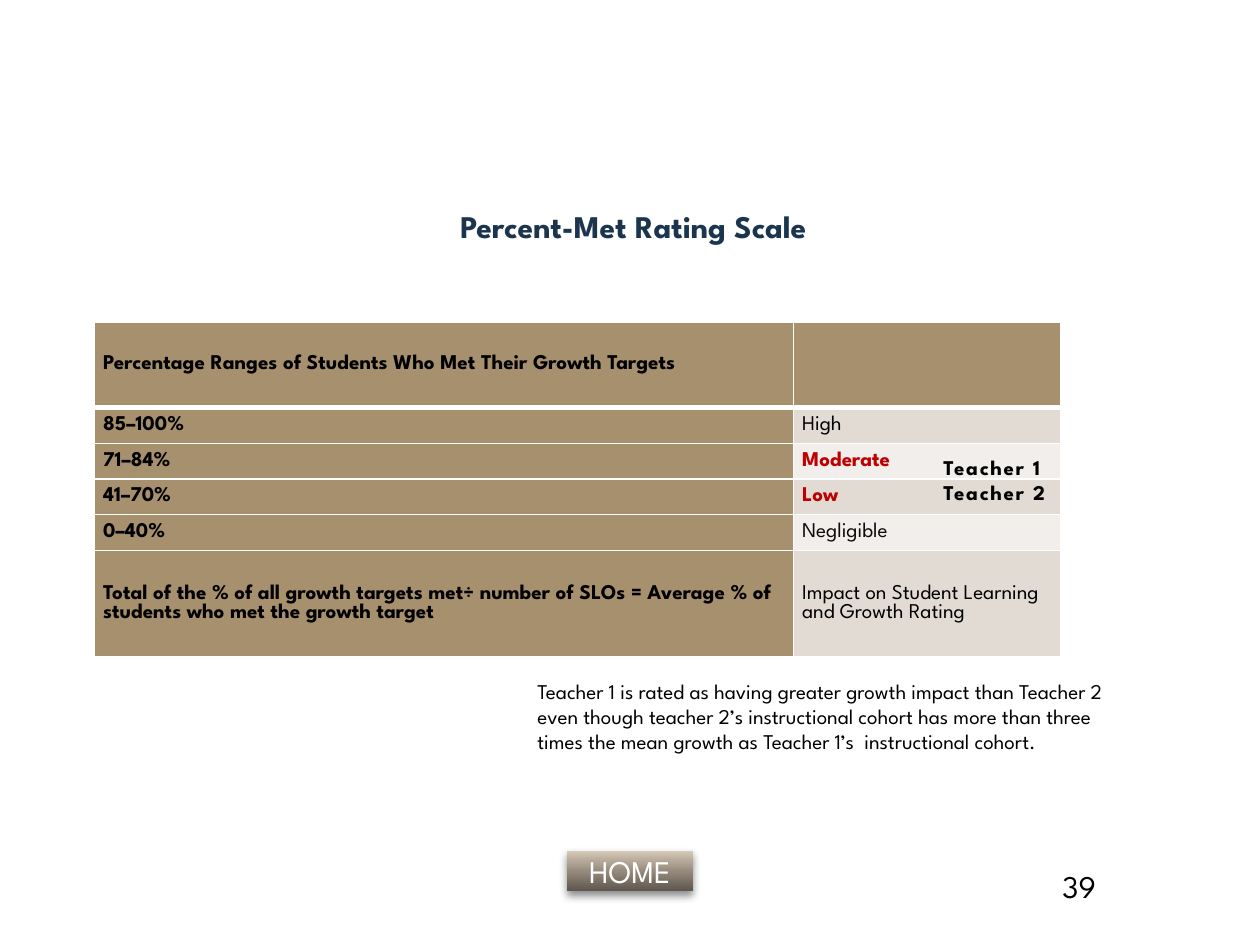
from dataclasses import dataclass

from lxml import etree
from pptx import Presentation
from pptx.dml.color import RGBColor
from pptx.enum.shapes import MSO_SHAPE as Shape
from pptx.enum.text import MSO_ANCHOR as Anchor, PP_ALIGN as Align
from pptx.oxml import parse_xml
from pptx.oxml.ns import nsdecls, qn
from pptx.util import Pt


@dataclass(frozen=True)
class Theme:
    font: str = "League Spartan"
    navy: str = "1A354D"
    black: str = "000000"
    soft_black: str = "0D0D0D"
    white: str = "FFFFFF"
    red: str = "C00000"
    tan: str = "A6906D"
    bands: tuple = ("E1DBD4", "F1EEEB")
    button: tuple = ((0, "5F574E"), (50, "988C7E"), (70, "B2A596"), (100, "D8CAB8"))
    body: int = 12
    large: int = 18
    leading: float = 1.19
    table_leading: float = 0.92


T = Theme()


def write(p, text, size=T.body, color=T.black, bold=False, leading=None, spacing=0):
    """Put one formatted run in a paragraph."""
    r = p.add_run()
    r.text = text
    for name, value in dict(name=T.font, size=Pt(size), bold=bold).items():
        setattr(r.font, name, value)
    r.font.color.rgb = RGBColor.from_string(color)
    if leading:
        p.line_spacing = Pt(round(size * leading, 2))
    if spacing:
        r.font._element.set("spc", str(spacing * 100))


def frame(tf, anchor=Anchor.TOP, inset=(7.2, 3.6)):
    x, y = map(Pt, inset)
    values = dict(word_wrap=True, vertical_anchor=anchor, margin_left=x,
                  margin_right=x, margin_top=y, margin_bottom=y)
    for name, value in values.items():
        setattr(tf, name, value)


def text_box(s, box, lines, anchor=Anchor.TOP, align=Align.LEFT, **style):
    tf = s.shapes.add_textbox(*map(Pt, box)).text_frame
    frame(tf, anchor)
    for i, line in enumerate(lines):
        p = tf.add_paragraph() if i else tf.paragraphs[0]
        p.alignment = align
        write(p, line, **style)


def cell_borders(cell, top, bottom):
    tc_pr = cell._tc.get_or_add_tcPr()
    for i, (side, width) in enumerate(dict(L=1, R=1, T=top, B=bottom).items()):
        tc_pr.insert(i, parse_xml(
            f'<a:ln{side} {nsdecls("a")} w="{Pt(width)}"><a:solidFill>'
            f'<a:srgbClr val="{T.white}"/></a:solidFill></a:ln{side}>'))


def rating_table(s, box):
    rows = [
        ("Percentage Ranges of Students Who Met Their Growth Targets", "", T.black),
        ("85–100%", "High", T.black),
        ("71–84%", "Moderate", T.red),
        ("41–70%", "Low", T.red),
        ("0–40%", "Negligible", T.soft_black),
        ("Total of the % of all growth targets met÷ number of SLOs = Average % of "
         "students who met the growth target",
         "Impact on Student Learning and Growth Rating", T.black),
    ]
    left, top, width, height = box
    header, band, rating = 49, 20.4, 152.6
    tbl = s.shapes.add_table(len(rows), 2, *map(Pt, box)).table
    for col, w in zip(tbl.columns, (width - rating, rating)):
        col.width = Pt(w)
    heights = [header] + [band] * 4 + [height - header - 4 * band]

    for i, (label, result, color) in enumerate(rows):
        tbl.rows[i].height = Pt(heights[i])
        cells = ((label, T.black, True, T.tan),
                 (result, color, color == T.red, T.bands[(i - 1) % 2] if i else T.tan))
        for j, (text, ink, bold, fill) in enumerate(cells):
            cell = tbl.cell(i, j)
            values = dict(vertical_anchor=Anchor.MIDDLE, margin_left=Pt(5),
                          margin_right=Pt(5), margin_top=0, margin_bottom=0)
            for name, value in values.items():
                setattr(cell, name, value)
            cell.fill.solid()
            cell.fill.fore_color.rgb = RGBColor.from_string(fill)
            cell_borders(cell, 3 if i == 1 else 1, 3 if i == 0 else 1)
            if text:
                write(cell.text_frame.paragraphs[0], text, color=ink, bold=bold,
                      leading=T.table_leading)


def home_button(s, box):
    sp = s.shapes.add_shape(Shape.ACTION_BUTTON_CUSTOM, *map(Pt, box))
    sp.line.fill.background()
    # Four-stop gradient running upwards
    sp.fill.gradient()
    sp.fill.gradient_angle = 90
    stops = sp._element.spPr.find(qn("a:gradFill")).find(qn("a:gsLst"))
    for gs in list(stops):
        stops.remove(gs)
    for pos, color in T.button:
        gs = etree.SubElement(stops, qn("a:gs"), pos=str(pos * 1000))
        etree.SubElement(gs, qn("a:srgbClr"), val=color)
    # Soft shadow below
    sp.shadow.inherit = False
    effects = sp._element.spPr.find(qn("a:effectLst"))
    effects.append(parse_xml(
        f'<a:outerShdw {nsdecls("a")} blurRad="{Pt(5)}" dist="{Pt(3)}" dir="5400000" '
        f'rotWithShape="0"><a:srgbClr val="{T.black}"><a:alpha val="45000"/>'
        '</a:srgbClr></a:outerShdw>'))
    frame(sp.text_frame, Anchor.MIDDLE, (0, 0))
    p = sp.text_frame.paragraphs[0]
    p.alignment = Align.CENTER
    write(p, "HOME", T.large, T.white)


def rating_slide(prs):
    s = prs.slides.add_slide(prs.slide_layouts[6])
    # Navigation
    home_button(s, (324, 486, 72, 23))
    # Title
    text_box(s, (2, 96, 720, 66), ["Percent-Met Rating Scale"], Anchor.MIDDLE,
             Align.CENTER, size=T.large, color=T.navy, bold=True)
    # Rating scale with the teachers beside their ratings
    rating_table(s, (54, 184, 552, 191.6))
    text_box(s, (532, 256.6, 80, 36), ["Teacher 1", "Teacher 2"], bold=True,
             leading=T.leading, spacing=1)
    # Conclusion
    text_box(s, (300, 384, 354, 65),
             ["Teacher 1 is rated as having greater growth impact than Teacher 2  even "
              "though teacher 2’s instructional cohort has more than three times the mean "
              "growth as Teacher 1’s  instructional cohort."], leading=T.leading)
    # Slide number
    text_box(s, (600, 492, 84, 37), ["39"], size=T.large, leading=T.leading)


def main():
    prs = Presentation()
    prs.slide_width, prs.slide_height = Pt(720), Pt(540)
    rating_slide(prs)
    prs.save("out.pptx")


if __name__ == "__main__":
    main()
